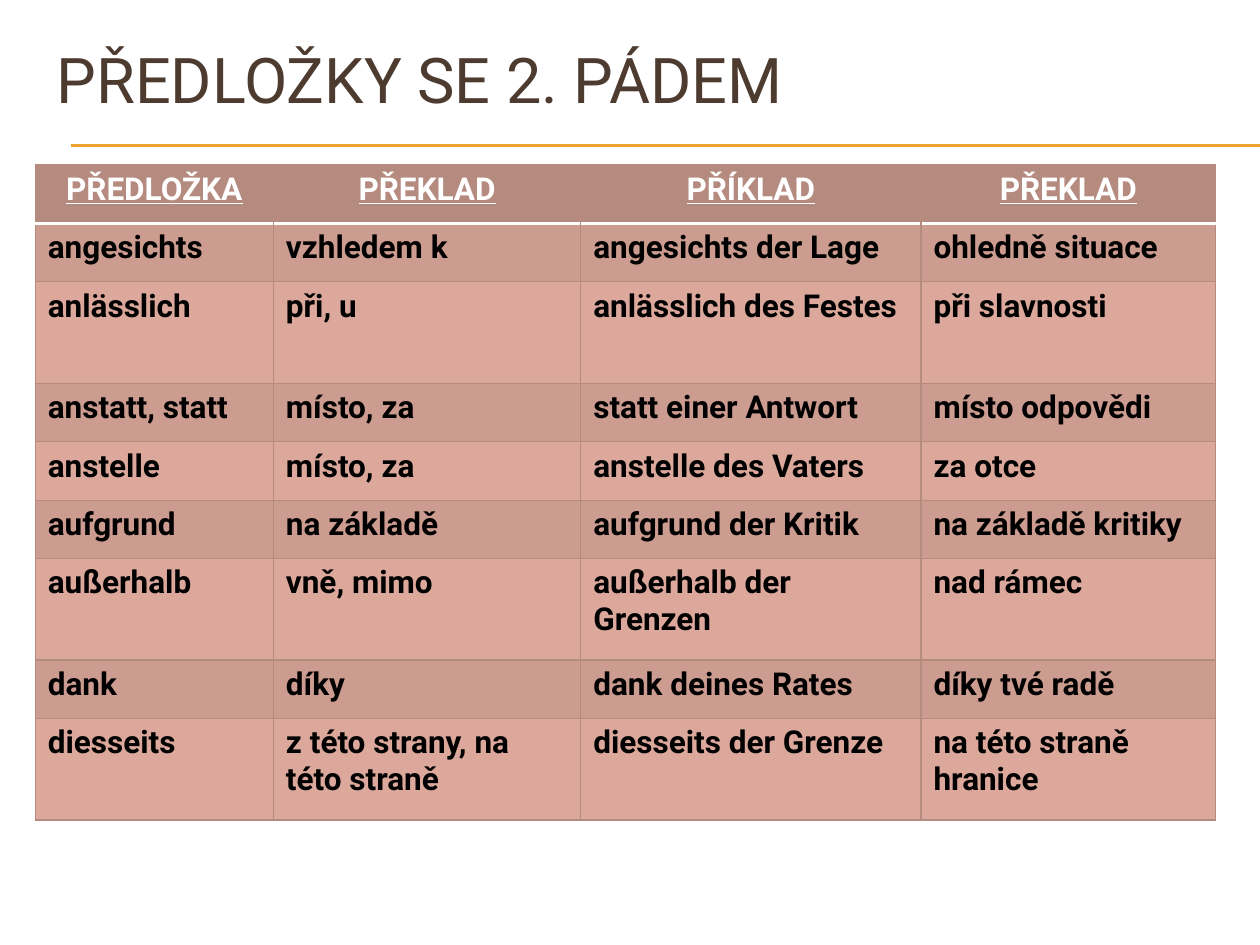
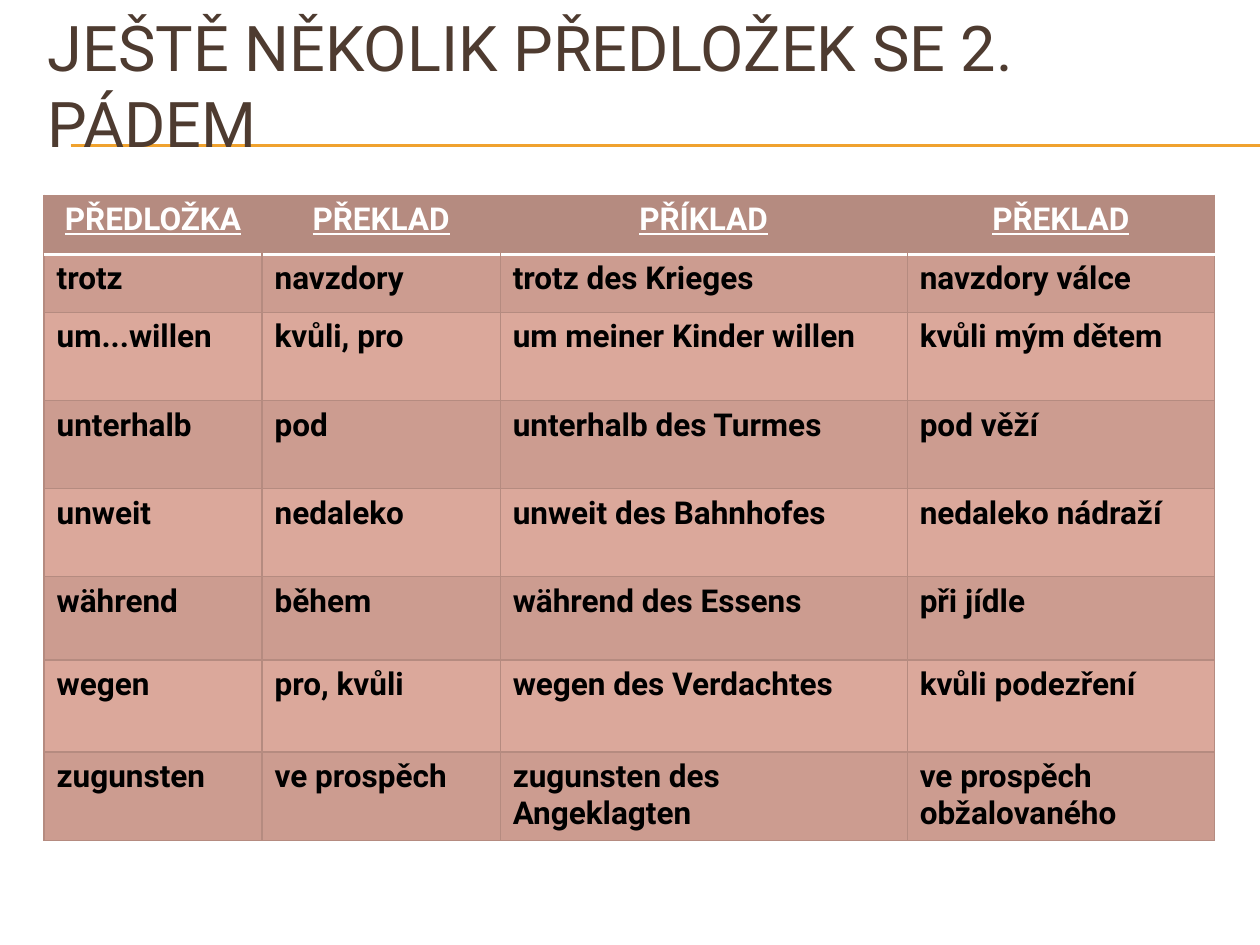
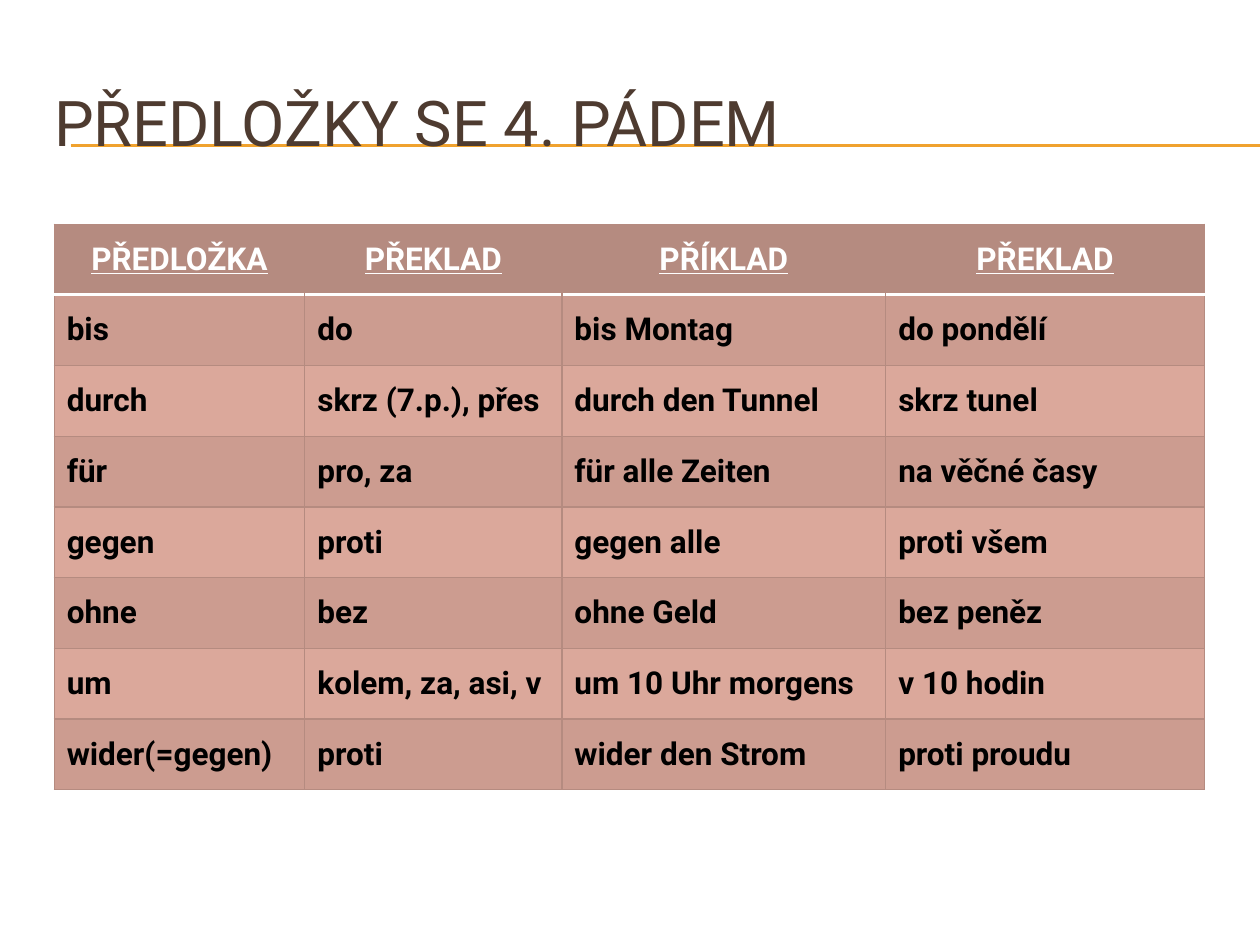
from lxml import etree
from pptx import Presentation
from pptx.dml.color import RGBColor
from pptx.enum.shapes import MSO_CONNECTOR
from pptx.enum.text import MSO_ANCHOR, MSO_AUTO_SIZE, PP_ALIGN
from pptx.oxml.ns import qn
from pptx.util import Inches, Pt

# Shared look
FONT = "Roboto"
BROWN = RGBColor(0x4E, 0x3B, 0x30)
GOLD = RGBColor(0xF0, 0xA2, 0x2E)
WHITE = RGBColor(0xFF, 0xFF, 0xFF)
BLACK = RGBColor(0x00, 0x00, 0x00)
ROSE = RGBColor(0xB5, 0x8B, 0x80)
DARK_BAND = RGBColor(0xCC, 0x9C, 0x90)
LIGHT_BAND = RGBColor(0xDB, 0xA8, 0x9B)
GRID = (ROSE, 0.79)
HEADER_RULE = (WHITE, 2)
RULE_LEFT, RULE_RIGHT, RULE_TOPS = 0.56, 10, (1.15, 1.16)
TITLE_ONLY = 5

HEADINGS = ["PŘEDLOŽKA", "PŘEKLAD", "PŘÍKLAD", "PŘEKLAD"]

# Content: boxes are left, top, width, height in inches
SLIDES = [
    dict(
        title="PŘEDLOŽKY SE 2. PÁDEM",
        title_box=(0.35, 0.21, 9.5, 0.83),
        table_box=(0.28, 1.31, 9.37, 5.2),
        columns=[1.89, 2.44, 2.7, 2.34],
        heights=[0.46, 0.46, 0.8, 0.46, 0.46, 0.46, 0.8, 0.46, 0.8],
        anchor=MSO_ANCHOR.TOP,
        rows=[
            ["angesichts", "vzhledem k", "angesichts der Lage", "ohledně situace"],
            ["anlässlich", "při, u", "anlässlich des Festes", "při slavnosti"],
            ["anstatt, statt", "místo, za", "statt einer Antwort", "místo odpovědi"],
            ["anstelle", "místo, za", "anstelle des Vaters", "za otce"],
            ["aufgrund", "na základě", "aufgrund der Kritik", "na základě kritiky"],
            ["außerhalb", "vně, mimo", "außerhalb der Grenzen", "nad rámec"],
            ["dank", "díky", "dank deines Rates", "díky tvé radě"],
            ["diesseits", "z této strany, na této straně", "diesseits der Grenze",
             "na této straně hranice"],
        ],
    ),
    dict(
        title="JEŠTĚ NĚKOLIK PŘEDLOŽEK SE 2. PÁDEM",
        title_box=(0.28, 0.21, 9.5, 0.92),
        table_box=(0.35, 1.55, 9.29, 5.12),
        columns=[1.73, 1.89, 3.23, 2.44],
        heights=[0.47, 0.46, 0.7, 0.7, 0.7, 0.66, 0.73, 0.7],
        anchor=MSO_ANCHOR.TOP,
        rows=[
            ["trotz", "navzdory", "trotz des Krieges", "navzdory válce"],
            ["um...willen", "kvůli, pro", "um meiner Kinder willen", "kvůli mým dětem"],
            ["unterhalb", "pod", "unterhalb des Turmes", "pod věží"],
            ["unweit", "nedaleko", "unweit des Bahnhofes", "nedaleko nádraží"],
            ["während", "během", "während des Essens", "při jídle"],
            ["wegen", "pro, kvůli", "wegen des Verdachtes", "kvůli podezření"],
            ["zugunsten", "ve prospěch", "zugunsten des Angeklagten",
             "ve prospěch obžalovaného"],
        ],
    ),
    dict(
        title="PŘEDLOŽKY SE 4. PÁDEM",
        title_box=(0.33, 0.5, 9.5, 0.92),
        table_box=(0.43, 1.78, 9.13, 4.49),
        columns=[1.99, 2.04, 2.57, 2.53],
        heights=[1] * 8,
        anchor=MSO_ANCHOR.MIDDLE,
        rows=[
            ["bis", "do", "bis Montag", "do pondělí"],
            ["durch", "skrz (7.p.), přes", "durch den Tunnel", "skrz tunel"],
            ["für", "pro, za", "für alle Zeiten", "na věčné časy"],
            ["gegen", "proti", "gegen alle", "proti všem"],
            ["ohne", "bez", "ohne Geld", "bez peněz"],
            ["um", "kolem, za, asi, v", "um 10 Uhr morgens", "v 10 hodin"],
            ["wider(=gegen)", "proti", "wider den Strom", "proti proudu"],
        ],
    ),
]


def write_text(frame, text, size=18, color=BLACK, bold=False, underline=False,
               align=PP_ALIGN.LEFT):
    paragraph = frame.paragraphs[0]
    paragraph.alignment = align
    run = paragraph.add_run()
    run.text = text
    font = run.font
    font.name, font.size, font.bold, font.underline = FONT, Pt(size), bold, underline
    font.color.rgb = color


def set_borders(cell, **sides):
    """Give each side L, R, T, B its (color, width), or no line."""
    properties = cell._tc.get_or_add_tcPr()
    for index, side in enumerate("LRTB"):
        border = etree.Element(qn(f"a:ln{side}"))
        if side in sides:
            color, width = sides[side]
            border.set("w", str(Pt(width)))
            fill = etree.SubElement(border, qn("a:solidFill"))
            etree.SubElement(fill, qn("a:srgbClr"), val=str(color))
        else:
            etree.SubElement(border, qn("a:noFill"))
        properties.insert(index, border)


def add_title(slide, text, box):
    title = slide.shapes.title
    title.left, title.top, title.width, title.height = map(Inches, box)
    frame = title.text_frame
    frame.word_wrap = True
    frame.auto_size = MSO_AUTO_SIZE.NONE
    frame.vertical_anchor = MSO_ANCHOR.MIDDLE
    write_text(frame, text, size=36, color=BROWN)


def add_title_rules(slide):
    """Draw the gold double rule behind the title."""
    for top in RULE_TOPS:
        rule = slide.shapes.add_connector(
            MSO_CONNECTOR.STRAIGHT, Inches(RULE_LEFT), Inches(top),
            Inches(RULE_RIGHT), Inches(top))
        rule.line.color.rgb = GOLD
        rule.line.width = Pt(0.75)
        etree.SubElement(rule.element.spPr, qn("a:effectLst"))
        slide.shapes.title.element.addprevious(rule.element)


def format_header(cell, text, is_first, is_last):
    cell.fill.solid()
    cell.fill.fore_color.rgb = ROSE
    sides = dict(T=GRID, B=HEADER_RULE)
    if is_first:
        sides["L"] = GRID
    if is_last:
        sides["R"] = GRID
    set_borders(cell, **sides)
    write_text(cell.text_frame, text, color=WHITE, bold=True, underline=True,
               align=PP_ALIGN.CENTER)


def format_body(cell, text, row):
    cell.fill.solid()
    cell.fill.fore_color.rgb = DARK_BAND if row % 2 else LIGHT_BAND
    set_borders(cell, L=GRID, R=GRID, T=HEADER_RULE if row == 1 else GRID, B=GRID)
    write_text(cell.text_frame, text, bold=True)


def add_preposition_table(slide, box, columns, heights, rows, anchor):
    left, top, width, height = map(Inches, box)
    table = slide.shapes.add_table(
        len(rows) + 1, len(columns), left, top, width, height).table
    # Share the box out in proportion to the given widths and heights
    for column, share in zip(table.columns, columns):
        column.width = int(width * share / sum(columns))
    for row, share in zip(table.rows, heights):
        row.height = int(height * share / sum(heights))
    for row_index, texts in enumerate([HEADINGS] + rows):
        for column_index, text in enumerate(texts):
            cell = table.cell(row_index, column_index)
            cell.vertical_anchor = anchor
            if row_index == 0:
                format_header(cell, text, column_index == 0,
                              column_index == len(columns) - 1)
            else:
                format_body(cell, text, row_index)


def add_preposition_slide(presentation, title, title_box, table_box, **table):
    slide = presentation.slides.add_slide(presentation.slide_layouts[TITLE_ONLY])
    add_title(slide, title, title_box)
    add_title_rules(slide)
    add_preposition_table(slide, table_box, **table)


def main():
    presentation = Presentation()
    presentation.slide_width, presentation.slide_height = Inches(10), Inches(7.5)
    for content in SLIDES:
        add_preposition_slide(presentation, **content)
    presentation.save("out.pptx")


if __name__ == "__main__":
    main()
